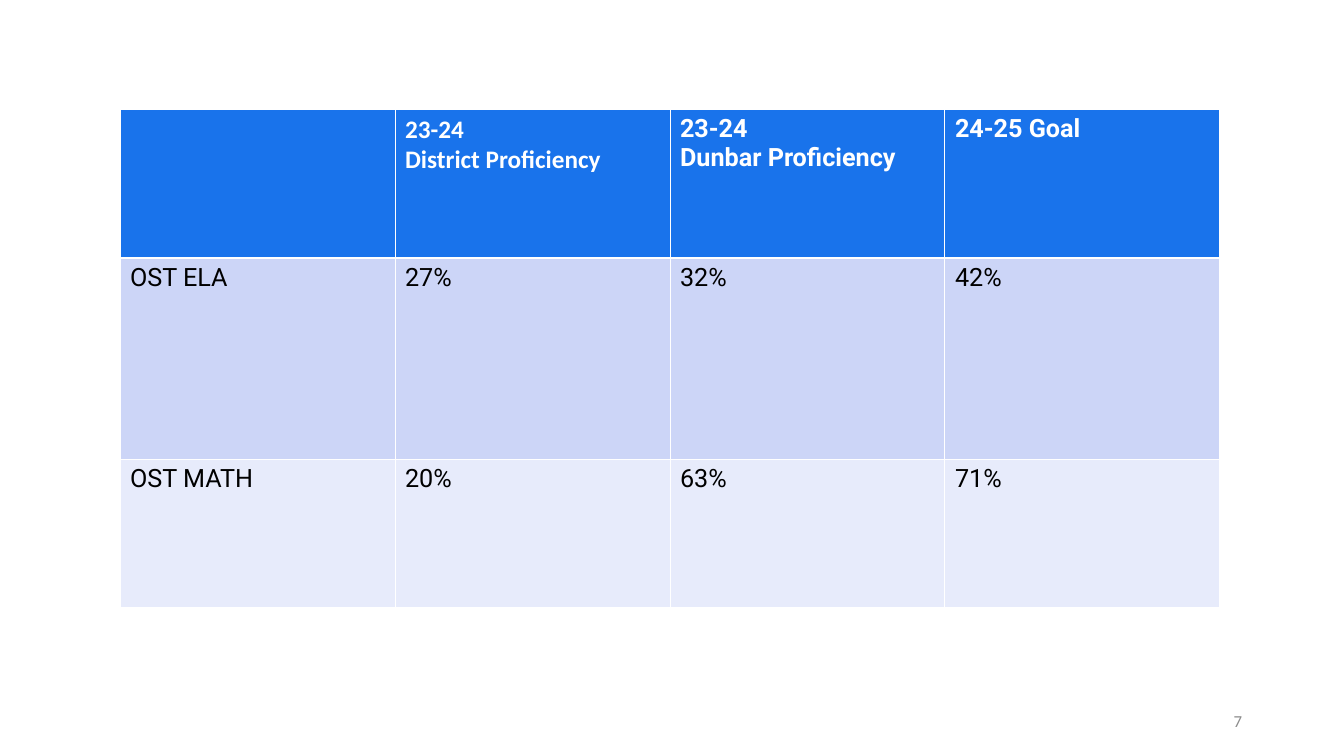
from lxml.etree import SubElement
from pptx import Presentation
from pptx.dml.color import RGBColor
from pptx.enum.text import MSO_ANCHOR as Anchor, PP_ALIGN as Align
from pptx.oxml.ns import qn
from pptx.util import Emu, Pt

SLIDE_SIZE = (1344, 756)
GOALS = [
    ["", "23-24\vDistrict Proficiency", "23-24\vDunbar Proficiency", "24-25 Goal"],
    ["OST ELA", "27%", "32%", "42%"],
    ["OST MATH", "20%", "63%", "71%"],
]
GRID_LEFT, GRID_TOP, COLUMN_WIDTH = 120, 109, 275
ROW_HEIGHTS = [149, 201, 149]
ROW_FILLS = ["1973EB", "CCD5F7", "E7EBFB"]
ROW_INKS = ["FFFFFF", "000000", "000000"]
THIN, THICK = 0.75, 2.03
ROW_EDGES = [(THIN, THICK), (THICK, THIN), (THIN, THIN)]
PAGE_NUMBER = "7"
PAGE_NUMBER_BOX = (950, 701, 302, 40)


def px(length):
    """Turn px into EMU."""
    return Emu(round(length * 914400 / 100.8))


def color(value):
    """Turn a hex string into a colour."""
    return RGBColor.from_string(value)


def style(paragraph, face, size, ink, bold=False):
    """Format every run of a paragraph."""
    for run in paragraph.runs:
        run.font.name = face
        run.font.size = Pt(size)
        run.font.bold = bold
        run.font.color.rgb = color(ink)


def add_borders(cell, top, bottom):
    """Draw white borders round a cell."""
    properties = cell._tc.get_or_add_tcPr()
    edges = [("a:lnL", THIN), ("a:lnR", THIN), ("a:lnT", top), ("a:lnB", bottom)]
    for tag, width in edges:
        line = SubElement(properties, qn(tag), w=str(Pt(width)))
        fill = SubElement(line, qn("a:solidFill"))
        SubElement(fill, qn("a:srgbClr"), val="FFFFFF")


def add_goals(slide):
    """Build the table of proficiency goals."""
    columns = len(GOALS[0])
    table = slide.shapes.add_table(
        len(GOALS), columns, px(GRID_LEFT), px(GRID_TOP),
        px(COLUMN_WIDTH * columns), px(sum(ROW_HEIGHTS))).table
    for column in table.columns:
        column.width = px(COLUMN_WIDTH)
    for r, texts in enumerate(GOALS):
        table.rows[r].height = px(ROW_HEIGHTS[r])
        for c, text in enumerate(texts):
            cell = table.cell(r, c)
            add_borders(cell, *ROW_EDGES[r])
            cell.fill.solid()
            cell.fill.fore_color.rgb = color(ROW_FILLS[r])
            cell.text_frame.text = text
            face = "Calibri" if (r, c) == (0, 1) else "Roboto"
            style(cell.text_frame.paragraphs[0], face, 18, ROW_INKS[r], r == 0)


def add_page_number(slide):
    """Place the page number at the lower right."""
    frame = slide.shapes.add_textbox(*map(px, PAGE_NUMBER_BOX)).text_frame
    frame.word_wrap = True
    frame.vertical_anchor = Anchor.MIDDLE
    frame.text = PAGE_NUMBER
    frame.paragraphs[0].alignment = Align.RIGHT
    style(frame.paragraphs[0], "Calibri", 12, "8C8C8C")


def main():
    """Build and save the slide."""
    deck = Presentation()
    deck.slide_width, deck.slide_height = map(px, SLIDE_SIZE)
    slide = deck.slides.add_slide(deck.slide_layouts[6])
    add_page_number(slide)
    add_goals(slide)
    deck.save("out.pptx")


if __name__ == "__main__":
    main()
